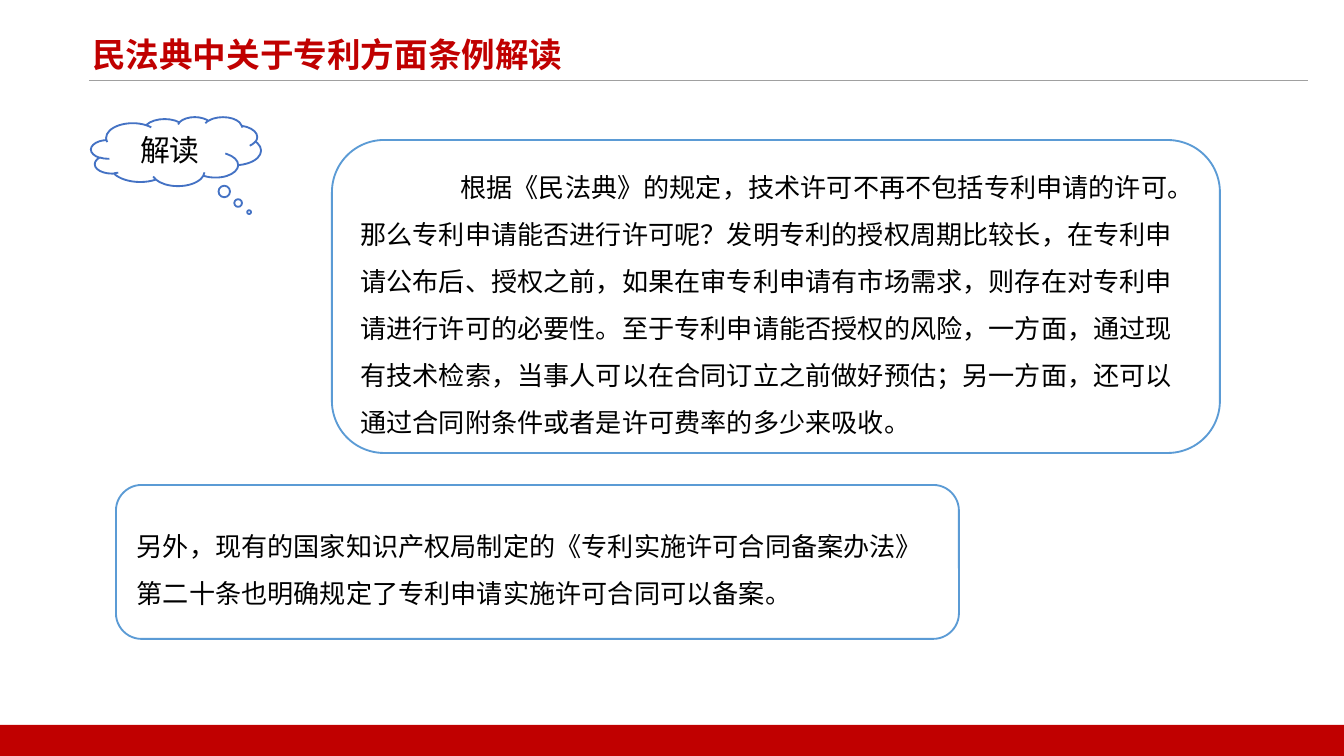
import pptx
import pptx.dml.color
import pptx.enum.shapes
import pptx.enum.text
import pptx.oxml.ns
import pptx.util
from lxml import etree

SHAPES = pptx.enum.shapes.MSO_SHAPE
ALIGN = pptx.enum.text.PP_ALIGN
ANCHOR = pptx.enum.text.MSO_ANCHOR
FONT = "Noto Sans CJK SC"
RED, WHITE, GRAY, BLACK = "C00000", "FFFFFF", "A0A0A0", "000000"
CLOUD_BLUE, BOX_BLUE = "4472C4", "5B9BD5"


def px(length):
    return pptx.util.Emu(round(length * 914400 / 134.4))


def color(value):
    return pptx.dml.color.RGBColor.from_string(value)


class SlideBuilder:
    def __init__(self, slide):
        self.slide = slide
        slide.background.fill.solid()
        slide.background.fill.fore_color.rgb = color(WHITE)

    def line(self, left, top, right, shade):
        rule = self.slide.shapes.add_connector(
            pptx.enum.shapes.MSO_CONNECTOR.STRAIGHT, px(left), px(top), px(right), px(top))
        rule.line.color.rgb = color(shade)
        rule.line.width = pptx.util.Pt(0.5)
        etree.SubElement(rule._element.spPr, pptx.oxml.ns.qn("a:effectLst"))

    def shape(self, kind, bounds, fill=None, outline=None):
        shape = self.slide.shapes.add_shape(kind, *map(px, bounds))
        shape.shadow.inherit = False
        if fill:
            shape.fill.solid()
            shape.fill.fore_color.rgb = color(fill)
        else:
            shape.fill.background()
        if outline:
            shape.line.color.rgb = color(outline)
            shape.line.width = pptx.util.Pt(1)
        else:
            shape.line.fill.background()
        return shape

    def textbox(self, bounds):
        return self.slide.shapes.add_textbox(*map(px, bounds))

    def set_text(self, box, text, size, shade=BLACK, bold=False, anchor=ANCHOR.MIDDLE,
                 indent=0, **paragraph_format):
        frame = box.text_frame
        frame.word_wrap = True
        frame.vertical_anchor = anchor
        para = frame.paragraphs[0]
        for name, value in {"alignment": ALIGN.LEFT, **paragraph_format}.items():
            setattr(para, name, value)
        if indent:
            para._p.get_or_add_pPr().set("indent", str(px(indent)))
        span = para.add_run()
        span.text = text
        for name, value in {"size": pptx.util.Pt(size), "bold": bold, "name": FONT}.items():
            setattr(span.font, name, value)
        span.font.color.rgb = color(shade)
        etree.SubElement(span._r.get_or_add_rPr(), pptx.oxml.ns.qn("a:ea"), typeface=FONT)

    def rounded_note(self, bounds, text, indent=0):
        box = self.shape(SHAPES.ROUNDED_RECTANGLE, bounds, outline=BOX_BLUE)
        self.set_text(box, text, 14, indent=indent, line_spacing=1.5)


def main():
    deck = pptx.Presentation()
    deck.slide_width, deck.slide_height = px(1344), px(756)
    page = SlideBuilder(deck.slides.add_slide(deck.slide_layouts[6]))

    page.line(89, 81, 1308, GRAY)
    page.shape(SHAPES.RECTANGLE, (0, 725, 1344, 31), fill=RED)
    title = page.textbox((79, 27, 1222, 47))
    page.set_text(title, "民法典中关于专利方面条例解读", 18, RED, True, ANCHOR.TOP)

    cloud = page.shape(SHAPES.CLOUD_CALLOUT, (91, 117, 170, 69), WHITE, CLOUD_BLUE)
    cloud.adjustments[0], cloud.adjustments[1] = 0.43, 0.88
    page.set_text(cloud, "解读", 16, alignment=ALIGN.CENTER)

    page.rounded_note(
        (332, 140, 888, 313),
        "根据《民法典》的规定，技术许可不再不包括专利申请的许可。"
        "那么专利申请能否进行许可呢？发明专利的授权周期比较长，在专利申请公布后、授权之前，"
        "如果在审专利申请有市场需求，则存在对专利申请进行许可的必要性。"
        "至于专利申请能否授权的风险，一方面，通过现有技术检索，当事人可以在合同订立之前做好预估；"
        "另一方面，还可以通过合同附条件或者是许可费率的多少来吸收。",
        indent=100)
    page.rounded_note(
        (116, 485, 843, 154),
        "另外，现有的国家知识产权局制定的《专利实施许可合同备案办法》"
        "第二十条也明确规定了专利申请实施许可合同可以备案。")

    deck.save("out.pptx")


if __name__ == "__main__":
    main()
